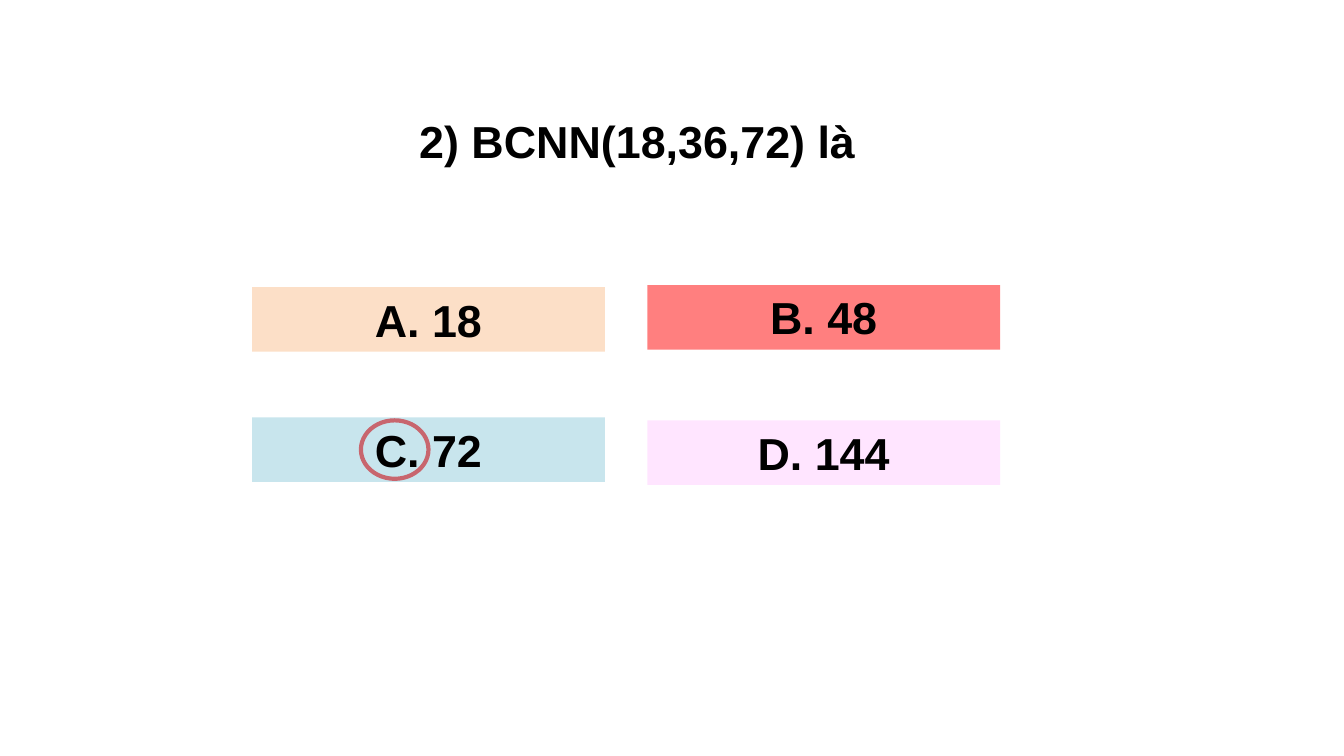
"""Build a quiz slide with one question and four answers."""
from pptx import Presentation, util as u
from pptx.dml.color import RGBColor
from pptx.enum import shapes, text
from pptx.oxml.ns import qn
from lxml import etree

TITLE = "2) BCNN(18,36,72) là"
ANSWERS = [
    ("A. 18", "peach", 0, 2.85),
    ("B. 48", "red", 1, 2.83),
    ("C. 72", "blue", 0, 4.14),
    ("D. 144", "pink", 1, 4.17),
]
COLORS = {"peach": "FAC090", "red": "FF0000", "blue": "93CDDD",
          "pink": "FFCCFF", "white": "FFFFFF", "black": "000000"}
LEFT, STEP, WIDE, HIGH = 2.5, 3.92, 3.5, 0.64
RING = (3.58, 4.17, 0.67, 0.58)


def color(name):
    return RGBColor.from_string(COLORS[name])


def inches(box):
    return [u.Inches(n) for n in box]


def add_box(slide, kind, box, fill):
    shape = slide.shapes.add_shape(kind, *inches(box))
    shape.shadow.inherit = False
    shape.fill.solid()
    shape.fill.fore_color.rgb = color(fill)
    shape.line.fill.background()
    return shape


def fade(shape, share):
    tint = shape._element.spPr.find(qn("a:solidFill"))[0]
    etree.SubElement(tint, qn("a:alpha")).set("val", str(share * 1000))


def write(shape, words, align, wrap):
    frame = shape.text_frame
    frame.text = words
    frame.word_wrap = wrap
    frame.auto_size = text.MSO_AUTO_SIZE.SHAPE_TO_FIT_TEXT
    frame.vertical_anchor = text.MSO_ANCHOR.TOP
    line = frame.paragraphs[0]
    line.alignment = align
    font = line.runs[0].font
    font.name, font.size, font.bold = "Arial", u.Pt(32), True
    font.color.rgb = color("black")


def main():
    deck = Presentation()
    deck.slide_width, deck.slide_height = inches((13.33, 7.5))
    slide = deck.slides.add_slide(deck.slide_layouts[6])

    ring = add_box(slide, shapes.MSO_SHAPE.OVAL, RING, "white")
    ring.line.color.rgb = color("red")
    ring.line.width = u.Pt(3)

    for words, fill, col, top in ANSWERS:
        box = (LEFT + col * STEP, top, WIDE, HIGH)
        bar = add_box(slide, shapes.MSO_SHAPE.RECTANGLE, box, fill)
        fade(bar, 50)
        write(bar, words, text.PP_ALIGN.CENTER, True)

    title = slide.shapes.add_textbox(*inches((4.06, 1.08, 4.56, HIGH)))
    write(title, TITLE, text.PP_ALIGN.JUSTIFY, False)
    deck.save("out.pptx")


if __name__ == "__main__":
    main()
